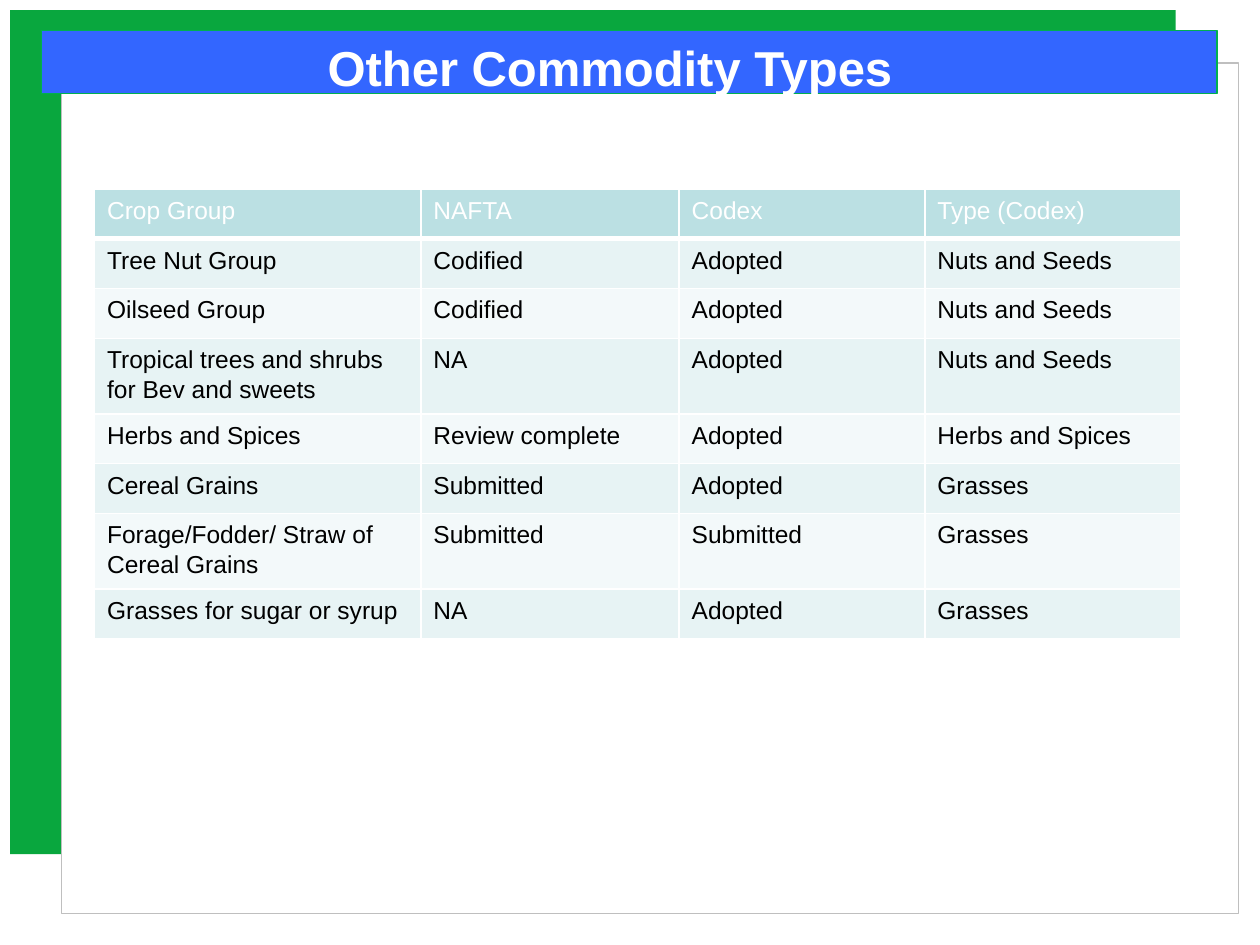
import lxml.etree
import pptx
import pptx.dml.color
import pptx.enum.text
import pptx.enum.shapes
import pptx.oxml.ns
import pptx.util

presentation = pptx.Presentation()
presentation.slide_width = pptx.util.Inches(10)
presentation.slide_height = pptx.util.Inches(7.5)
column = presentation.slide_width // 100
row = presentation.slide_height // 75


def color(value):
    return pptx.dml.color.RGBColor.from_string(value)


def add_run(paragraph, text, size, value, bold=False):
    run = paragraph.add_run()
    run.text = text
    run.font.name = "Arial"
    run.font.size = pptx.util.Pt(size)
    run.font.bold = bold
    run.font.color.rgb = color(value)


slide = presentation.slides.add_slide(presentation.slide_layouts[5])

panels = [
    (0.8, 0.8, 92.5, 67, "09A73E", None),
    (4.9, 5, 93.4, 67.5, "FFFFFF", "BFBFBF"),
    (3.3, 2.4, 93.3, 5, "3366FF", "00B050"),
]
for left, top, width, height, fill, outline in panels:
    panel = slide.shapes.add_shape(
        pptx.enum.shapes.MSO_SHAPE.RECTANGLE,
        round(left * column), round(top * row), round(width * column), round(height * row),
    )
    panel.shadow.inherit = False
    panel.fill.solid()
    panel.fill.fore_color.rgb = color(fill)
    if outline:
        panel.line.color.rgb = color(outline)
        panel.line.width = pptx.util.Pt(0.75)
    else:
        panel.line.fill.background()

title = slide.shapes.title
title.element.getparent().append(title.element)
title.left, title.top = 25 * column, round(2.5 * row)
title.width, title.height = 49 * column, round(5.7 * row)
frame = title.text_frame
frame.word_wrap = True
frame.auto_size = pptx.enum.text.MSO_AUTO_SIZE.SHAPE_TO_FIT_TEXT
frame.vertical_anchor = pptx.enum.text.MSO_ANCHOR.TOP
paragraph = frame.paragraphs[0]
paragraph.alignment = pptx.enum.text.PP_ALIGN.LEFT
add_run(paragraph, "Other Commodity Types", 28, "FFFFFF", True)

crops = [
    ("Crop Group", "NAFTA", "Codex", "Type (Codex)"),
    ("Tree Nut Group", "Codified", "Adopted", "Nuts and Seeds"),
    ("Oilseed Group", "Codified", "Adopted", "Nuts and Seeds"),
    ("Tropical trees and shrubs for Bev and sweets", "NA", "Adopted", "Nuts and Seeds"),
    ("Herbs and Spices", "Review complete", "Adopted", "Herbs and Spices"),
    ("Cereal Grains", "Submitted", "Adopted", "Grasses"),
    ("Forage/Fodder/ Straw of Cereal Grains", "Submitted", "Submitted", "Grasses"),
    ("Grasses for sugar or syrup", "NA", "Adopted", "Grasses"),
]
column_widths = [25.9, 20.5, 19.5, 20.3]
two_line_rows = (3, 6)
table = slide.shapes.add_table(
    len(crops), len(column_widths),
    round(7.5 * column), 15 * row, round(86.2 * column), round(35.7 * row),
).table
table.first_row = False
table.horz_banding = False
for table_column, width in zip(table.columns, column_widths):
    table_column.width = round(width * column)

for row_index, texts in enumerate(crops):
    is_header = row_index == 0
    table.rows[row_index].height = round((5.9 if row_index in two_line_rows else 3.95) * row)
    band = "BBE0E3" if is_header else ("F3F9FA", "E7F3F4")[row_index % 2]
    for column_index, text in enumerate(texts):
        cell = table.cell(row_index, column_index)
        properties = cell._tc.get_or_add_tcPr()
        for side in ("lnL", "lnR", "lnT", "lnB"):
            weight = 3 if is_header and side == "lnB" else 1
            border = lxml.etree.SubElement(
                properties, pptx.oxml.ns.qn("a:" + side), w=str(pptx.util.Pt(weight))
            )
            border_fill = lxml.etree.SubElement(border, pptx.oxml.ns.qn("a:solidFill"))
            lxml.etree.SubElement(border_fill, pptx.oxml.ns.qn("a:srgbClr"), val="FFFFFF")
        cell.fill.solid()
        cell.fill.fore_color.rgb = color(band)
        paragraph = cell.text_frame.paragraphs[0]
        paragraph.line_spacing = 1.07
        if is_header:
            paragraph.space_after = pptx.util.Pt(8)
        add_run(paragraph, text, 14, "FFFFFF" if is_header else "000000")

presentation.save("out.pptx")
